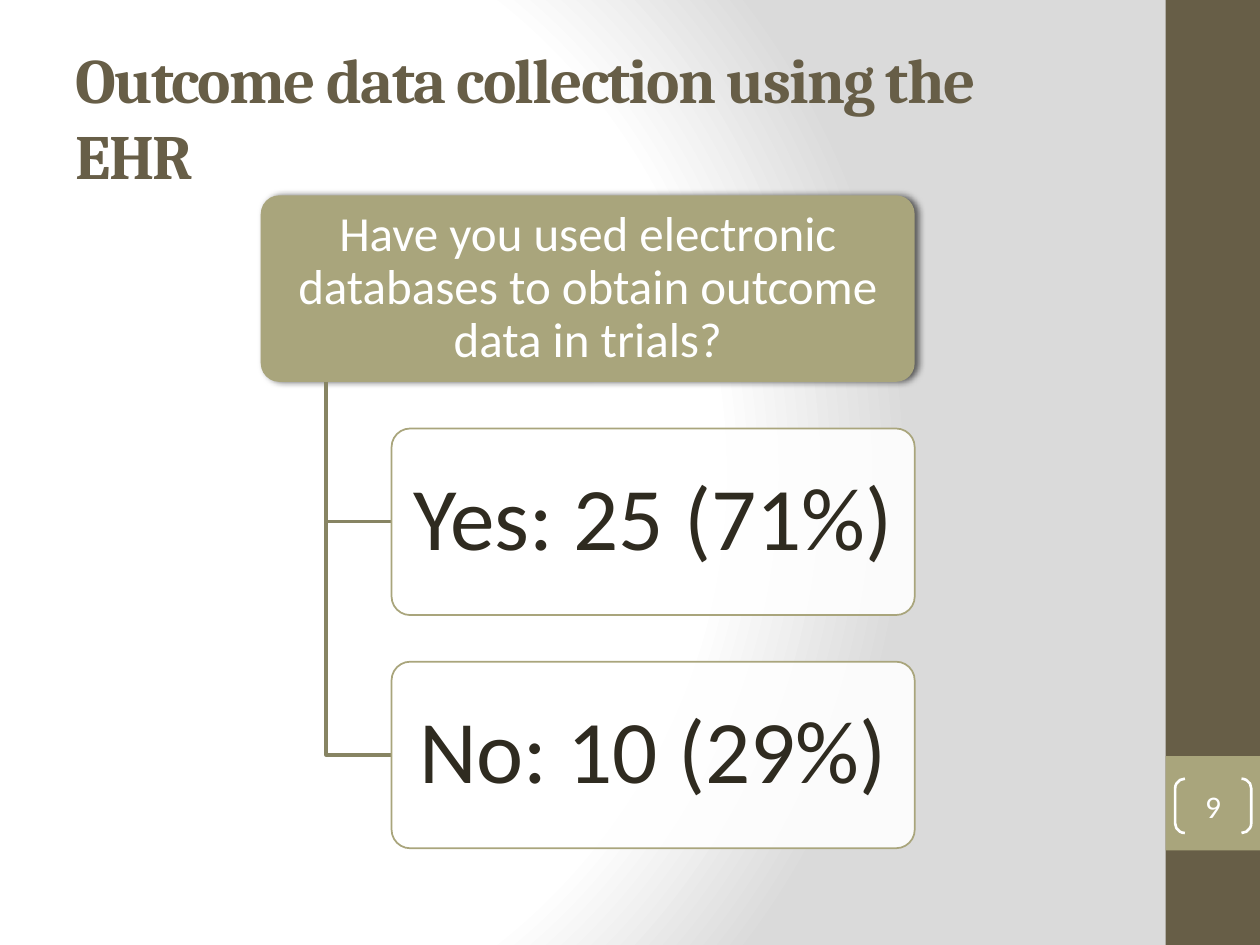
from lxml import etree
from pptx import Presentation
from pptx.dml.color import RGBColor
from pptx.enum.shapes import MSO_SHAPE
from pptx.enum.text import MSO_ANCHOR, MSO_AUTO_SIZE, PP_ALIGN
from pptx.oxml import parse_xml
from pptx.oxml.ns import nsdecls, qn
from pptx.util import Pt

RECTANGLE = MSO_SHAPE.RECTANGLE
ROUNDED = MSO_SHAPE.ROUNDED_RECTANGLE
BRACKETS = MSO_SHAPE.DOUBLE_BRACKET
MIDDLE = MSO_ANCHOR.MIDDLE
CENTER, LEFT = PP_ALIGN.CENTER, PP_ALIGN.LEFT

BROWN = RGBColor(0x67, 0x5E, 0x47)
OLIVE = RGBColor(0xA9, 0xA5, 0x7C)
DARK_OLIVE = RGBColor(0x87, 0x84, 0x63)
INK = RGBColor(0x2F, 0x2B, 0x20)
WHITE = RGBColor(0xFF, 0xFF, 0xFF)

TITLE_ONLY = 5
TITLE_FONT, BODY_FONT = "Cambria", "Calibri"

# Hierarchy geometry, in points: everything follows from the question box
TREE_LEFT, TREE_TOP, TREE_WIDTH = 149, 111.6, 373.7
BOX_HEIGHT = 106.6
ROW_STEP = 1.25 * BOX_HEIGHT
TRUNK_X = TREE_LEFT + 0.1 * TREE_WIDTH
ANSWER_LEFT = TREE_LEFT + 0.2 * TREE_WIDTH
ANSWER_WIDTH = 0.8 * TREE_WIDTH

QUESTION = "Have you used electronic databases to obtain outcome data in trials?"
ANSWERS = ["Yes: 25 (71%)", "No: 10 (29%)"]


def set_background(slide):
    """Radial gradient from white on the left to grey on the right."""
    stops = "".join(
        f'<a:gs pos="{position}"><a:srgbClr val="{color}"/></a:gs>'
        for position, color in [(0, "FFFFFF"), (75000, "FFFFFF"), (100000, "DADADA")]
    )
    background = parse_xml(
        f'<p:bg {nsdecls("p", "a")}><p:bgPr><a:gradFill rotWithShape="1">'
        f'<a:gsLst>{stops}</a:gsLst><a:path path="circle">'
        '<a:fillToRect l="20000" t="50000" r="100000" b="50000"/></a:path>'
        "</a:gradFill><a:effectLst/></p:bgPr></p:bg>"
    )
    slide.element.find(qn("p:cSld")).insert(0, background)


def add_shape(slide, kind, left, top, width, height, fill=None, line=None, weight=1):
    shape = slide.shapes.add_shape(kind, Pt(left), Pt(top), Pt(width), Pt(height))
    shape.shadow.inherit = False
    if fill is None:
        shape.fill.background()
    else:
        shape.fill.solid()
        shape.fill.fore_color.rgb = fill
    if line is None:
        shape.line.fill.background()
    else:
        shape.line.color.rgb = line
        shape.line.width = Pt(weight)
    return shape


def set_text(shape, text, size, color, inset_x=0, inset_y=0, font=BODY_FONT,
             align=CENTER, spacing=1.0):
    frame = shape.text_frame
    frame.word_wrap = True
    frame.auto_size = MSO_AUTO_SIZE.NONE
    frame.vertical_anchor = MIDDLE
    frame.margin_left = frame.margin_right = Pt(inset_x)
    frame.margin_top = frame.margin_bottom = Pt(inset_y)
    frame.text = text
    paragraph = frame.paragraphs[0]
    paragraph.alignment = align
    paragraph.line_spacing = spacing
    paragraph.font.name = font
    paragraph.font.size = Pt(size)
    paragraph.font.color.rgb = color
    return paragraph


def add_title(slide, text):
    title = slide.shapes.title
    title.left, title.top, title.width, title.height = Pt(36), Pt(21.6), Pt(600), Pt(90)
    paragraph = set_text(title, text, 36, BROWN, 7.2, 3.6, TITLE_FONT, LEFT)
    paragraph.font.bold = True
    # Letters drawn one point closer
    paragraph.runs[0].font._element.set("spc", "-100")


def add_question(slide, text):
    box = add_shape(slide, ROUNDED, TREE_LEFT, TREE_TOP, TREE_WIDTH, BOX_HEIGHT, OLIVE)
    box.adjustments[0] = 0.1
    set_text(box, text, 28, WHITE, 4.2, 2.8, spacing=0.9)
    # Soft shadow to the right
    effects = box._element.spPr.find(qn("a:effectLst"))
    effects.append(parse_xml(
        f'<a:outerShdw {nsdecls("a")} blurRad="{Pt(4)}" dist="{Pt(2)}" dir="0" '
        'rotWithShape="0"><a:srgbClr val="000000"><a:alpha val="60000"/>'
        "</a:srgbClr></a:outerShdw>"
    ))


def add_elbow(slide, end_y):
    """Line down from the question box and across to an answer."""
    builder = slide.shapes.build_freeform(Pt(TRUNK_X), Pt(TREE_TOP + BOX_HEIGHT))
    builder.add_line_segments(
        [(Pt(TRUNK_X), Pt(end_y)), (Pt(ANSWER_LEFT), Pt(end_y))], close=False
    )
    elbow = builder.convert_to_shape()
    elbow.shadow.inherit = False
    elbow.fill.background()
    elbow.line.color.rgb = DARK_OLIVE
    elbow.line.width = Pt(2)


def add_answer(slide, text, top):
    add_elbow(slide, top + BOX_HEIGHT / 2)
    box = add_shape(slide, ROUNDED, ANSWER_LEFT, top, ANSWER_WIDTH, BOX_HEIGHT, WHITE, OLIVE)
    box.adjustments[0] = 0.1
    set_text(box, text, 51, INK, 7.6, 5, spacing=0.9)
    # Fill slightly transparent
    color = box._element.spPr.find(qn("a:solidFill"))[0]
    etree.SubElement(color, qn("a:alpha")).set("val", "90000")


def main():
    presentation = Presentation()
    presentation.slide_width, presentation.slide_height = Pt(720), Pt(540)
    slide = presentation.slides.add_slide(presentation.slide_layouts[TITLE_ONLY])
    set_background(slide)

    # Side band
    add_shape(slide, RECTANGLE, 666, 0, 54, 540, BROWN)
    add_shape(slide, RECTANGLE, 666, 432, 54, 54, OLIVE)

    add_title(slide, "Outcome data collection using the EHR")

    # Hierarchy
    add_question(slide, QUESTION)
    for row, answer in enumerate(ANSWERS, start=1):
        add_answer(slide, answer, TREE_TOP + row * ROW_STEP)

    # Slide number
    number = add_shape(slide, BRACKETS, 671.5, 445, 43.5, 31, line=WHITE, weight=1.5)
    number.adjustments[0] = 0.18
    set_text(number, "9", 18, WHITE)

    presentation.save("out.pptx")


if __name__ == "__main__":
    main()
